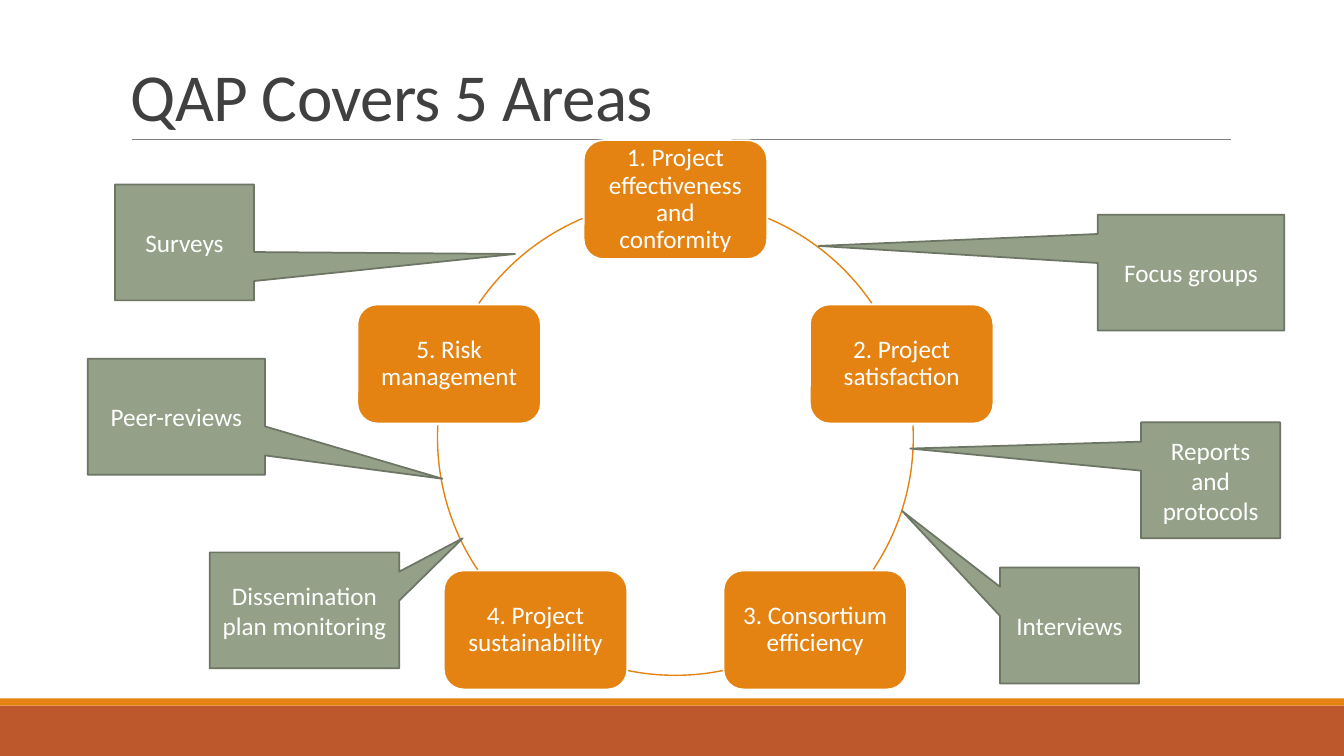
"""Build the slide showing the five QAP areas and their monitoring methods."""
from math import cos, radians, sin

from lxml.etree import SubElement
from pptx import Presentation
from pptx.dml.color import RGBColor
from pptx.enum.shapes import MSO_CONNECTOR as Connector, MSO_SHAPE as Shape
from pptx.enum.text import MSO_ANCHOR as Anchor, PP_ALIGN as Align
from pptx.oxml.ns import qn
from pptx.util import Inches, Pt

ORANGE = RGBColor(0xE4, 0x83, 0x12)
RUST = RGBColor(0xBD, 0x58, 0x2C)
SAGE = RGBColor(0x94, 0xA0, 0x88)
SAGE_DARK = RGBColor(0x6D, 0x76, 0x65)
CHARCOAL = RGBColor(0x40, 0x40, 0x40)
GRAY = RGBColor(0x80, 0x80, 0x80)
WHITE = RGBColor(0xFF, 0xFF, 0xFF)

CELL = 0.1
COLUMNS, ROWS = 133.33, 75
RING_X, RING_Y, RADIUS = 67, 43.4, 23.6
NODE_W, NODE_H = 18.2, 11.8
CALLOUT_H = 11.5

AREAS = [
    "1. Project effectiveness and conformity",
    "2. Project satisfaction",
    "3. Consortium efficiency",
    "4. Project sustainability",
    "5. Risk management",
]
ARCS = [(293, 325.7), (357.1, 33.8), (78.5, 101.5), (146.2, 182.9), (214.3, 247)]
CALLOUTS = [
    ("Surveys", 11.4, 18.3, 13.8, (51.1, 25.2)),
    ("Focus groups", 108.9, 21.3, 18.5, (81.2, 24.4)),
    ("Peer-reviews", 8.7, 35.6, 17.6, (43.9, 47.5)),
    ("Interviews", 99.2, 56.3, 13.8, (89.5, 50.7)),
    ("Dissemination plan monitoring", 20.8, 54.8, 18.8, (45.9, 53.4)),
    ("Reports and protocols", 113.2, 41.9, 13.8, (90.3, 44.5)),
]

NODE_FRAME = {
    "word_wrap": True, "vertical_anchor": Anchor.MIDDLE,
    "margin_left": Inches(0.13), "margin_right": Inches(0.13),
    "margin_top": Inches(0.13), "margin_bottom": Inches(0.13),
}
CALLOUT_FRAME = {"word_wrap": True, "vertical_anchor": Anchor.MIDDLE}
TITLE_FRAME = {"word_wrap": True, "vertical_anchor": Anchor.BOTTOM}
NODE_PARAGRAPH = {"alignment": Align.CENTER, "line_spacing": 0.9}
CALLOUT_PARAGRAPH = {"alignment": Align.CENTER}
TITLE_PARAGRAPH = {"alignment": Align.LEFT, "line_spacing": 0.85}
LABEL_FONT = {"name": "Calibri", "size": Pt(18)}
TITLE_FONT = {"name": "Calibri", "size": Pt(48)}


def grid(*cells):
    """Turn grid cells into lengths."""
    return [Inches(cell * CELL) for cell in cells]


def apply(target, values):
    """Set every format value on the target."""
    for key, value in values.items():
        setattr(target, key, value)


def write(holder, text, frame_values, paragraph_values, font_values, color):
    """Write one formatted paragraph and return its run."""
    frame = holder.text_frame
    apply(frame, frame_values)
    paragraph = frame.paragraphs[0]
    apply(paragraph, paragraph_values)
    run = paragraph.add_run()
    run.text = text
    apply(run.font, font_values)
    run.font.color.rgb = color
    return run


def add_block(slide, kind, box, fill=None, line=None, width=1.25):
    """Add a preset shape without shadow."""
    block = slide.shapes.add_shape(kind, *grid(*box))
    block.shadow.inherit = False
    for part, color in ((block.fill, fill), (block.line.fill, line)):
        if color is None:
            part.background()
        else:
            part.solid()
            part.fore_color.rgb = color
    if line is not None:
        block.line.width = Pt(width)
    return block


def add_heading(slide):
    """Add the title and the rule below it."""
    rule = slide.shapes.add_connector(
        Connector.STRAIGHT, *grid(13.1, 13.85, 122.1, 13.85))
    rule.line.color.rgb = GRAY
    rule.line.width = Pt(0.5)
    SubElement(rule._element.spPr, qn("a:effectLst"))
    title = slide.shapes.add_textbox(*grid(12, 2.2, 110, 11.7))
    run = write(title, "QAP Covers 5 Areas", TITLE_FRAME, TITLE_PARAGRAPH,
                TITLE_FONT, CHARCOAL)
    run._r.get_or_add_rPr().set("spc", "-50")


def add_arc(slide, start, end):
    """Add a stretch of the ring between two angles in degrees."""
    box = RING_X - RADIUS, RING_Y - RADIUS, 2 * RADIUS, 2 * RADIUS
    arc = add_block(slide, Shape.ARC, box, line=ORANGE, width=1)
    for index, angle in enumerate((start, end)):
        arc.adjustments[index] = angle * 0.6


def add_area(slide, index, label):
    """Add an area at its place on the ring."""
    angle = radians(360 / len(AREAS) * index - 90)
    left = RING_X + RADIUS * cos(angle) - NODE_W / 2
    top = RING_Y + RADIUS * sin(angle) - NODE_H / 2
    area = add_block(slide, Shape.ROUNDED_RECTANGLE,
                     (left, top, NODE_W, NODE_H), ORANGE, WHITE)
    write(area, label, NODE_FRAME, NODE_PARAGRAPH, LABEL_FONT, WHITE)


def add_callout(slide, label, left, top, width, tip):
    """Add a method callout whose tip touches the ring."""
    callout = add_block(slide, Shape.RECTANGULAR_CALLOUT,
                        (left, top, width, CALLOUT_H), SAGE, SAGE_DARK)
    callout.adjustments[0] = (tip[0] - left) / width - 0.5
    callout.adjustments[1] = (tip[1] - top) / CALLOUT_H - 0.5
    write(callout, label, CALLOUT_FRAME, CALLOUT_PARAGRAPH, LABEL_FONT, WHITE)


def main():
    """Build and save the slide."""
    deck = Presentation()
    deck.slide_width, deck.slide_height = grid(COLUMNS, ROWS)
    slide = deck.slides.add_slide(deck.slide_layouts[6])
    add_block(slide, Shape.RECTANGLE, (0, 70, COLUMNS, 5), RUST)
    add_block(slide, Shape.RECTANGLE, (0, 69.3, COLUMNS, 0.7), ORANGE)
    add_heading(slide)
    for index, (label, arc) in enumerate(zip(AREAS, ARCS)):
        add_area(slide, index, label)
        add_arc(slide, *arc)
    for callout in CALLOUTS:
        add_callout(slide, *callout)
    deck.save("out.pptx")


if __name__ == "__main__":
    main()
